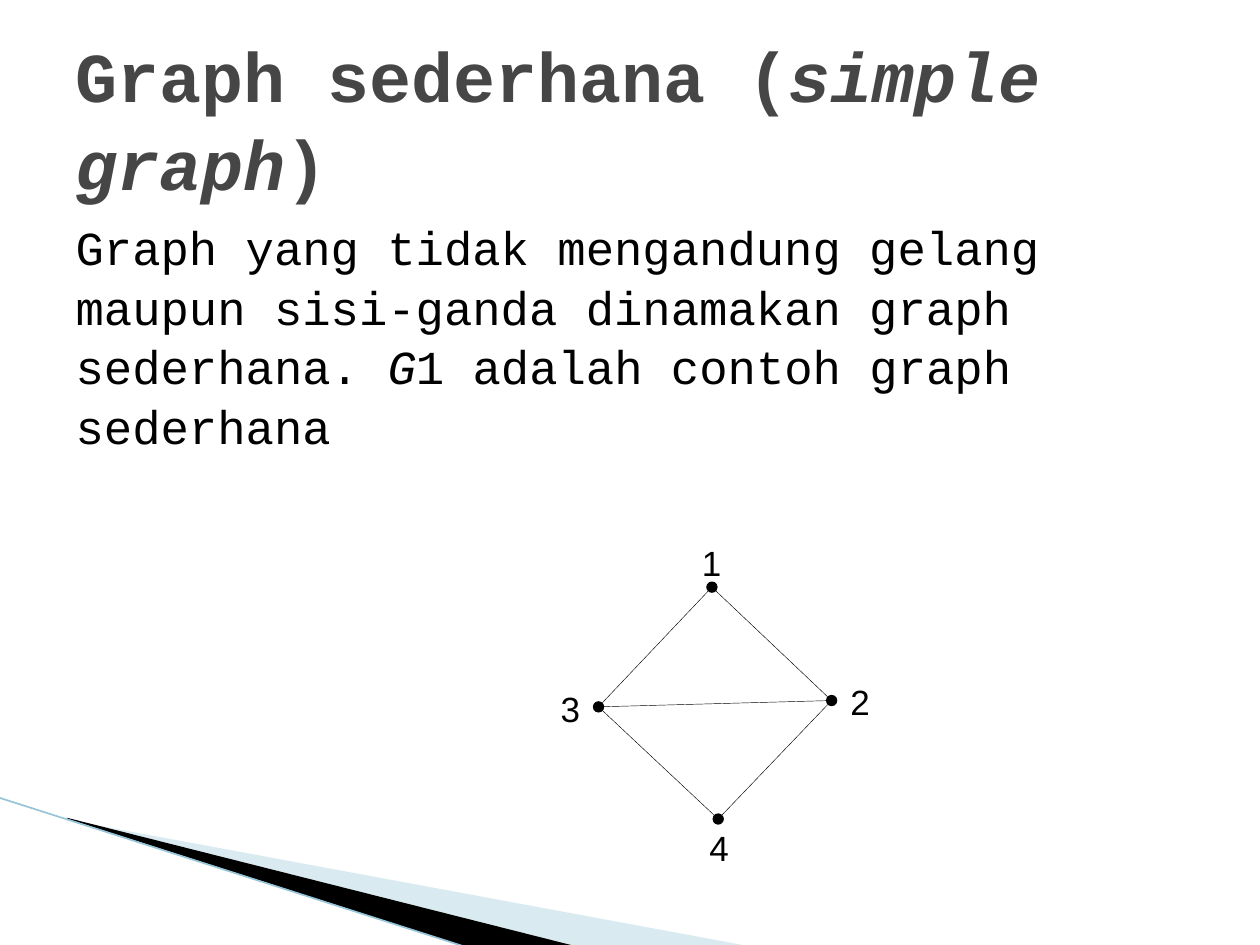
from dataclasses import dataclass

from lxml import etree
from pptx import Presentation
from pptx.dml.color import RGBColor
from pptx.enum.shapes import MSO_CONNECTOR, MSO_SHAPE
from pptx.enum.text import MSO_ANCHOR, MSO_AUTO_SIZE, PP_ALIGN
from pptx.oxml.ns import qn
from pptx.util import Inches, Pt

STRAIGHT, OVAL = MSO_CONNECTOR.STRAIGHT, MSO_SHAPE.OVAL
LEFT, CENTER = PP_ALIGN.LEFT, PP_ALIGN.CENTER
TOP, MIDDLE = MSO_ANCHOR.TOP, MSO_ANCHOR.MIDDLE


@dataclass(frozen=True)
class Theme:
    title: str = "464646"
    ink: str = "000000"
    accent: str = "97C5D8"
    pale: str = "A0CBDC"
    prose_font: str = "Courier New"
    label_font: str = "Arial"
    title_size: int = 40
    body_size: int = 27
    label_size: int = 20
    line_spacing: float = 1.05


THEME = Theme()
WIDTH, HEIGHT = 10, 7.5
MARGIN = WIDTH * 0.05

# Runs: (text, italic)
TITLE = [("Graph sederhana (", False), ("simple graph", True), (")", False)]
BODY = [
    ("Graph yang tidak mengandung gelang maupun sisi-ganda dinamakan graph sederhana. ", False),
    ("G", True),
    ("1 adalah contoh graph sederhana", False),
]

# Vertex: centre, and offset from there to the top left of its label
VERTICES = {
    "1": ((5.65, 4.66), (-0.08, -0.36)),
    "2": ((6.6, 5.56), (0.15, -0.16)),
    "3": ((4.75, 5.61), (-0.3, -0.15)),
    "4": ((5.7, 6.5), (-0.07, 0.06)),
}
EDGES = ["12", "24", "13", "34", "23"]
DOT = 0.09
LABEL_SIZE = (0.14, 0.23)

# Corner wedges: outline, colour, opacity in percent
WEDGES = [
    ([(0.55, 6.51), (5.95, 7.51), (4.56, 7.51), (0.55, 6.5)], THEME.pale, 40),
    ([(0.53, 6.49), (4.57, 7.51), (3.72, 7.52), (0.54, 6.5)], THEME.ink, 100),
]
CORNER_LINE = ((-0.01, 6.33), (3.71, 7.52))


def rgb(value):
    return RGBColor.from_string(value)


def inches(*values):
    return [Inches(value) for value in values]


def paint(shape, color):
    shape.shadow.inherit = False
    shape.fill.solid()
    shape.fill.fore_color.rgb = rgb(color)
    shape.line.fill.background()


def add_wedge(slide, outline, color, opacity):
    start, *rest = [inches(*point) for point in outline]
    builder = slide.shapes.build_freeform(*start)
    builder.add_line_segments(rest)
    wedge = builder.convert_to_shape()
    paint(wedge, color)
    if opacity < 100:
        srgb = wedge.fill._xPr.find(".//" + qn("a:srgbClr"))
        etree.SubElement(srgb, qn("a:alpha"), val=str(opacity * 1000))


def add_line(slide, start, end, color, width):
    line = slide.shapes.add_connector(STRAIGHT, *inches(*start, *end))
    line.line.color.rgb = rgb(color)
    line.line.width = Pt(width)
    etree.SubElement(line._element.spPr, qn("a:effectLst"))


def write(paragraph, runs, **font):
    color = rgb(font.pop("color"))
    for text, italic in runs:
        run = paragraph.add_run()
        run.text = text
        run.font.color.rgb = color
        for key, value in {**font, "italic": italic}.items():
            setattr(run.font, key, value)


def fill_placeholder(slide, holder, box, runs, anchor, inset_top, **font):
    """Place and write a placeholder, and bring it in front of the corner."""
    holder.left, holder.top, holder.width, holder.height = inches(*box)
    frame = holder.text_frame
    frame_format = {
        "auto_size": MSO_AUTO_SIZE.NONE,
        "word_wrap": True,
        "vertical_anchor": anchor,
        "margin_top": Inches(inset_top),
    }
    for key, value in frame_format.items():
        setattr(frame, key, value)
    paragraph = frame.paragraphs[0]
    properties = paragraph._p.get_or_add_pPr()
    properties.set("marL", "0")
    properties.set("indent", "0")
    etree.SubElement(properties, qn("a:buNone"))
    paragraph.alignment = LEFT
    paragraph.space_before = Pt(0)
    paragraph.line_spacing = THEME.line_spacing
    write(paragraph, runs, name=THEME.prose_font, **font)
    slide.shapes._spTree.append(holder._element)


def add_vertex(slide, center):
    x, y = center
    dot = slide.shapes.add_shape(OVAL, *inches(x - DOT / 2, y - DOT / 2, DOT, DOT))
    paint(dot, THEME.ink)


def add_label(slide, name, center, offset):
    corner = [c + o for c, o in zip(center, offset)]
    frame = slide.shapes.add_textbox(*inches(*corner, *LABEL_SIZE)).text_frame
    frame.word_wrap = False
    for side in ("left", "top", "right", "bottom"):
        setattr(frame, f"margin_{side}", 0)
    paragraph = frame.paragraphs[0]
    paragraph.alignment = CENTER
    write(paragraph, [(name, False)], name=THEME.label_font,
          size=Pt(THEME.label_size), color=THEME.ink)


def main():
    deck = Presentation()
    deck.slide_width, deck.slide_height = inches(WIDTH, HEIGHT)
    slide = deck.slides.add_slide(deck.slide_layouts[1])
    title, body = slide.placeholders[0], slide.placeholders[1]

    for wedge in WEDGES:
        add_wedge(slide, *wedge)
    add_line(slide, *CORNER_LINE, THEME.accent, 0.95)

    column = WIDTH - 2 * MARGIN
    fill_placeholder(slide, body, (MARGIN, 1.62, column, 4.95), BODY, TOP, 0.09,
                     size=Pt(THEME.body_size), color=THEME.ink)
    fill_placeholder(slide, title, (MARGIN, 0.3, column, 1.25), TITLE, MIDDLE, 0.05,
                     size=Pt(THEME.title_size), color=THEME.title, bold=True)

    for center, _ in VERTICES.values():
        add_vertex(slide, center)
    for start, end in EDGES:
        add_line(slide, VERTICES[start][0], VERTICES[end][0], THEME.ink, 0.25)
    for name, (center, offset) in VERTICES.items():
        add_label(slide, name, center, offset)

    deck.save("out.pptx")


if __name__ == "__main__":
    main()
